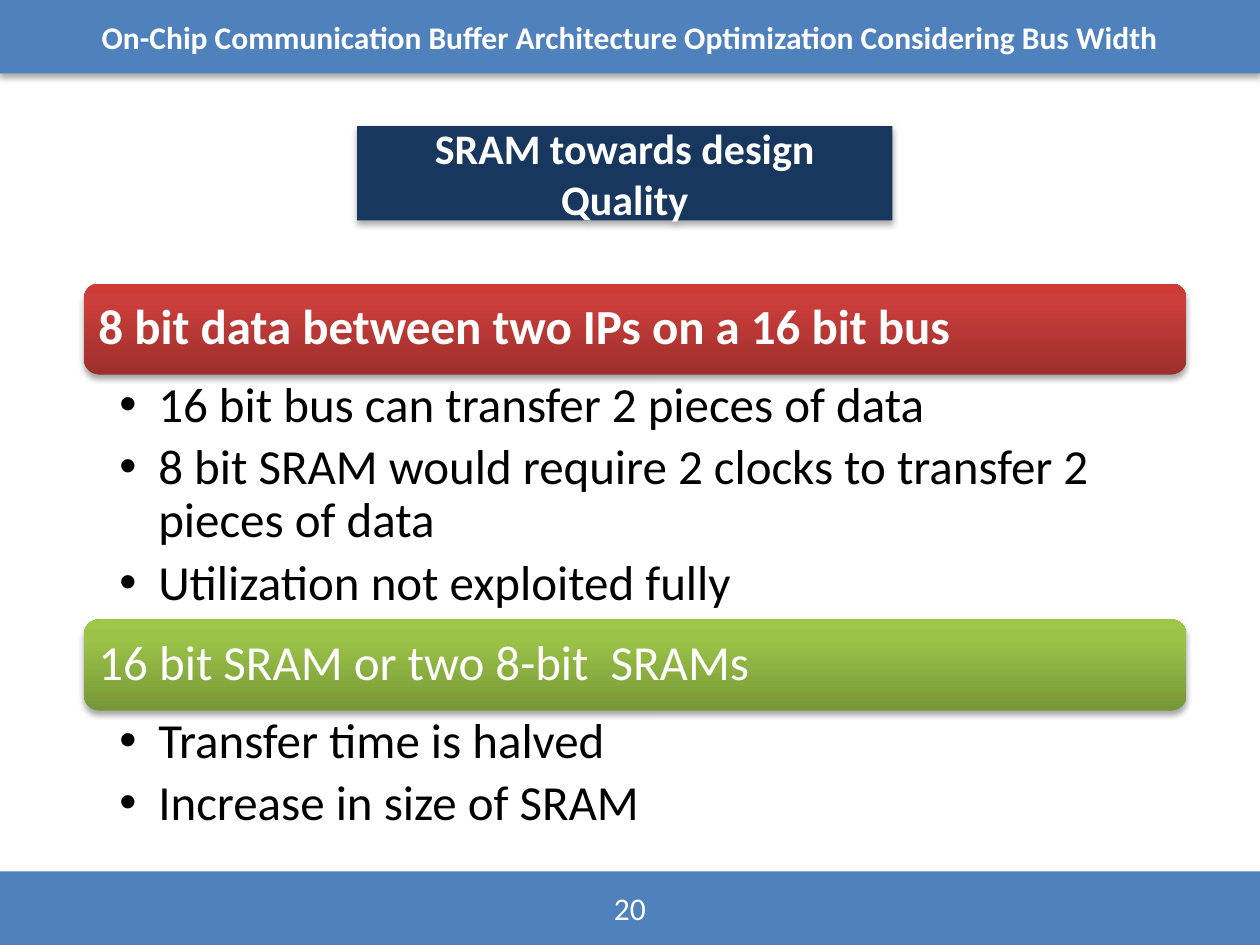
from lxml import etree
from pptx import Presentation, util as u
from pptx.dml.color import RGBColor
from pptx.enum import shapes, text
from pptx.oxml import parse_xml
from pptx.oxml.ns import qn

COLS, ROWS = 120, 90
WIDE, HIGH = u.Inches(10), u.Inches(7.5)
NS = 'xmlns:a="http://schemas.openxmlformats.org/drawingml/2006/main"'
WHITE = RGBColor(0xFF, 0xFF, 0xFF)
BLACK = RGBColor(0, 0, 0)
BLUE = RGBColor(0x4F, 0x81, 0xBD)
NAVY = RGBColor(0x17, 0x37, 0x5E)
REDS = RGBColor(0x9C, 0x2F, 0x2D), RGBColor(0xCB, 0x3E, 0x3A), RGBColor(0xCE, 0x3B, 0x37)
GREENS = RGBColor(0x77, 0x97, 0x37), RGBColor(0x9B, 0xC3, 0x48), RGBColor(0x9D, 0xC7, 0x46)
BAND = 8.68

HEADER = "On-Chip Communication Buffer Architecture Optimization Considering Bus Width"
PARTS = [
    ((8, 27, 105, 32), REDS, True, "8 bit data between two IPs on a 16 bit bus", [
        "16 bit bus can transfer 2 pieces of data",
        "8 bit SRAM would require 2 clocks to transfer 2 pieces of data",
        "Utilization not exploited fully"]),
    ((8, 59, 105, 21), GREENS, False, "16 bit SRAM or two 8-bit  SRAMs", [
        "Transfer time is halved",
        "Increase in size of SRAM"]),
]


def place(box):
    x, y, w, h = box
    return (round(WIDE * x / COLS), round(HIGH * y / ROWS),
            round(WIDE * w / COLS), round(HIGH * h / ROWS))


def apply(obj, form):
    for key, val in form.items():
        setattr(obj, key, val)


def write(para, words, size, color, bold=False):
    run = para.add_run()
    run.text = words
    apply(run.font, {"name": "Calibri", "size": u.Pt(size), "bold": bold})
    run.font.color.rgb = color


def shade(shape, alpha, blur, dist):
    shape.shadow.inherit = False
    glow = shape._element.spPr.find(qn("a:effectLst"))
    glow.append(parse_xml(
        f'<a:outerShdw {NS} blurRad="{u.Pt(blur)}" dist="{u.Pt(dist)}" dir="5400000" '
        f'rotWithShape="0"><a:srgbClr val="000000"><a:alpha val="{alpha * 1000}"/>'
        '</a:srgbClr></a:outerShdw>'))


def blend(shape, tones):
    stops = "".join(f'<a:gs pos="{pos * 1000}"><a:srgbClr val="{tone}"/></a:gs>'
                    for pos, tone in zip((0, 80, 100), tones))
    shape.fill.background()
    old = shape._element.spPr.find(qn("a:noFill"))
    old.getparent().replace(old, parse_xml(
        f'<a:gradFill {NS} rotWithShape="0"><a:gsLst>{stops}</a:gsLst>'
        '<a:lin ang="16200000" scaled="0"/></a:gradFill>'))


def panel(slide, box, fill, words, size, bold):
    shape = slide.shapes.add_shape(shapes.MSO_SHAPE.RECTANGLE, *place(box))
    shape.fill.solid()
    shape.fill.fore_color.rgb = fill
    shape.line.fill.background()
    shade(shape, 32, 3.5, 2.2)
    frame = shape.text_frame
    apply(frame, {"word_wrap": True, "vertical_anchor": text.MSO_ANCHOR.MIDDLE})
    para = frame.paragraphs[0]
    para.alignment = text.PP_ALIGN.CENTER
    write(para, words, size, WHITE, bold)


def band(slide, box, tones, words, bold):
    shape = slide.shapes.add_shape(shapes.MSO_SHAPE.ROUNDED_RECTANGLE, *place(box))
    blend(shape, tones)
    shape.line.fill.background()
    shade(shape, 35, 3.1, 1.8)
    frame = shape.text_frame
    apply(frame, {"word_wrap": True, "vertical_anchor": text.MSO_ANCHOR.MIDDLE,
                  "margin_left": u.Inches(0.08), "margin_right": u.Inches(0.08)})
    para = frame.paragraphs[0]
    apply(para, {"alignment": text.PP_ALIGN.LEFT, "line_spacing": 0.9})
    write(para, words, 28, WHITE, bold)


def points(slide, box, items):
    frame = slide.shapes.add_textbox(*place(box)).text_frame
    apply(frame, {"word_wrap": True,
                  "margin_left": u.Inches(0.28), "margin_right": u.Inches(0.22),
                  "margin_top": u.Inches(0.04), "margin_bottom": u.Inches(0.04)})
    for i, item in enumerate(items):
        para = frame.add_paragraph() if i else frame.paragraphs[0]
        apply(para, {"level": 1, "line_spacing": 0.9, "space_after": u.Pt(5.5)})
        props = para._p.get_or_add_pPr()
        props.set("marL", str(u.Inches(0.31)))
        props.set("indent", str(-u.Inches(0.31)))
        etree.SubElement(props, qn("a:buFont")).set("typeface", "Arial")
        etree.SubElement(props, qn("a:buChar")).set("char", "•")
        write(para, item, 28, BLACK)


def section(slide, box, tones, bold, head, items):
    x, y, w, h = box
    band(slide, (x, y, w, BAND), tones, head, bold)
    points(slide, (x, y + BAND, w, h - BAND), items)


def main():
    deck = Presentation()
    apply(deck, {"slide_width": WIDE, "slide_height": HIGH})
    slide = deck.slides.add_slide(deck.slide_layouts[6])
    panel(slide, (0, 83, COLS, 7), BLUE, "20", 18, False)
    panel(slide, (0, 0, COLS, 7), BLUE, HEADER, 18, True)
    for part in PARTS:
        section(slide, *part)
    panel(slide, (34, 12, 51, 9), NAVY, "SRAM towards design Quality", 24, True)
    deck.save("out.pptx")


if __name__ == "__main__":
    main()
